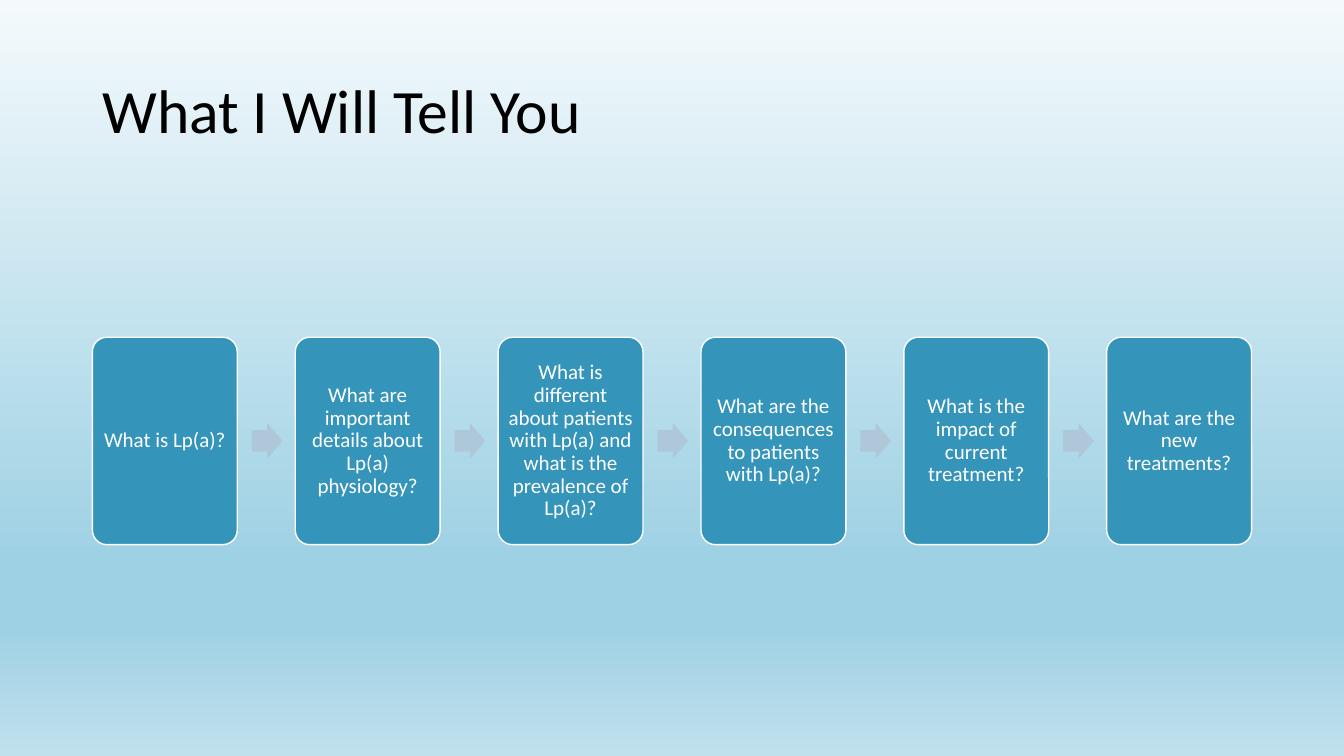
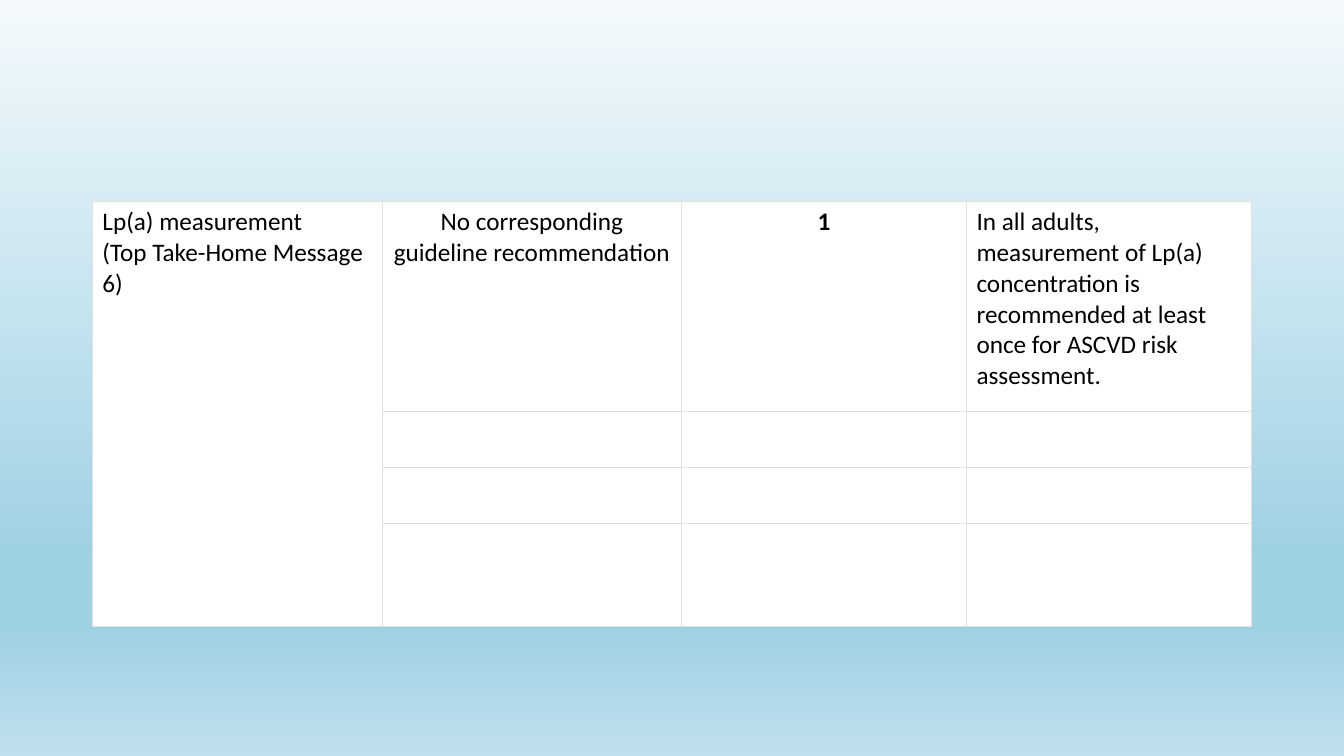
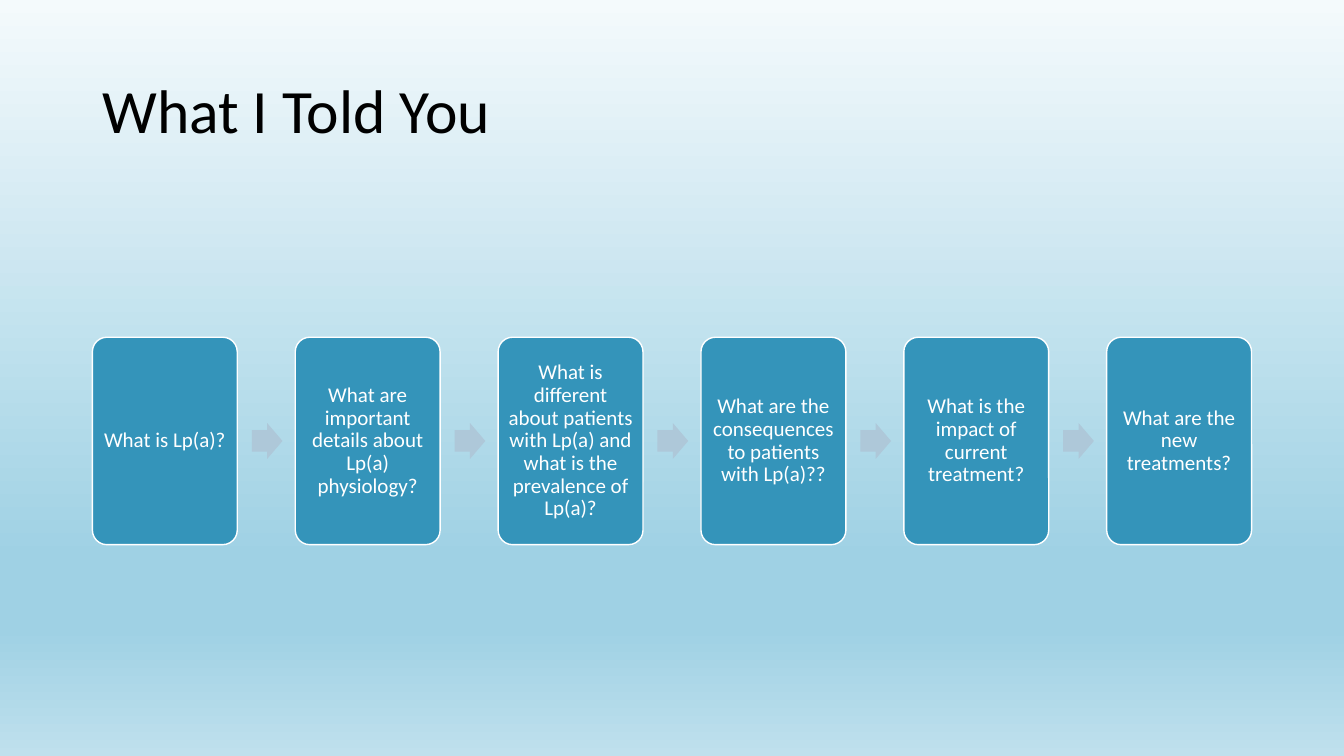
from copy import deepcopy

from lxml.etree import SubElement
from pptx import Presentation
from pptx.dml.color import RGBColor
from pptx.enum.shapes import MSO_SHAPE as Shape
from pptx.enum.text import MSO_ANCHOR as Anchor, PP_ALIGN as Align
from pptx.oxml.ns import qn
from pptx.util import Pt

# Shared look
FONT = "Calibri"
BLACK = RGBColor(0x00, 0x00, 0x00)
WHITE = RGBColor(0xFF, 0xFF, 0xFF)
STEP_BLUE = RGBColor(0x34, 0x94, 0xBA)
ARROW_BLUE = RGBColor(0xAE, 0xC8, 0xD9)
GRID_GREY = RGBColor(0xE0, 0xE0, 0xE0)
SKY = [
    (0, RGBColor(0xF4, 0xFA, 0xFC)),
    (0.74, RGBColor(0x9F, 0xD1, 0xE4)),
    (0.83, RGBColor(0x9F, 0xD1, 0xE4)),
    (1, RGBColor(0xBF, 0xE0, 0xED)),
]

# Regions: left, top, width, height in points
TITLE_BOX = (66, 28.75, 828, 104.4)
STEPS_BOX = (66, 240.9, 828, 148.2)
TABLE_BOX = (66, 144.2, 828, 303.6)

QUESTIONS = [
    "What is Lp(a)?",
    "What are important details about Lp(a) physiology?",
    "What is different about patients with Lp(a) and what is the prevalence of Lp(a)?",
    "What are the consequences to patients with Lp(a)?",
    "What is the impact of current treatment?",
    "What are the new treatments?",
]
QUESTIONS_TOLD = [q.replace("patients with Lp(a)?", "patients with Lp(a)??")
                  for q in QUESTIONS]

# Guideline table: text, alignment, bold
GUIDELINE = [
    ("Lp(a) measurement\v(Top Take-Home Message 6)", Align.LEFT, False),
    ("No corresponding guideline recommendation", Align.CENTER, False),
    ("1", Align.CENTER, True),
    ("In all adults, measurement of Lp(a) concentration is recommended "
     "at least once for ASCVD risk assessment.", Align.LEFT, False),
]
COLUMN_WIDTHS = [207.1, 213.7, 203.6, 203.6]
ROW_HEIGHTS = [149.6, 40, 40, 74]


def set_background(master):
    """Give every slide the same four-stop vertical gradient."""
    fill = master.background.fill
    fill.gradient()
    fill.gradient_angle = 270
    stop_list = next(master.element.iter(qn("a:gsLst")))
    while len(stop_list) < len(SKY):
        stop_list.append(deepcopy(stop_list[0]))
    for stop, (position, color) in zip(fill.gradient_stops, SKY):
        stop.position = position
        stop.color.rgb = color


def write(frame, text, size, color, align=Align.LEFT, bold=False, spacing=None):
    frame.word_wrap = True
    frame.text = text
    paragraph = frame.paragraphs[0]
    paragraph.alignment = align
    paragraph.line_spacing = spacing
    for run in paragraph.runs:
        run.font.name = FONT
        run.font.size = Pt(size)
        run.font.bold = bold
        run.font.color.rgb = color


def add_title(slide, text, box):
    frame = slide.shapes.add_textbox(*map(Pt, box)).text_frame
    frame.vertical_anchor = Anchor.MIDDLE
    write(frame, text, 44, BLACK, spacing=0.9)


def add_flat_shape(slide, kind, box, color):
    shape = slide.shapes.add_shape(kind, *map(Pt, box))
    shape.shadow.inherit = False
    shape.fill.solid()
    shape.fill.fore_color.rgb = color
    shape.line.fill.background()
    return shape


def add_steps(slide, questions, box):
    """Row of equal cards, with an arrow in each gap of 0.4 card widths."""
    left, top, width, height = box
    count = len(questions)
    card_width = width / (count + 0.4 * (count - 1))
    arrow_width, arrow_height = 0.212 * card_width, 0.248 * card_width

    for index, question in enumerate(questions):
        card_left = left + index * 1.4 * card_width

        # Question card
        card = add_flat_shape(slide, Shape.ROUNDED_RECTANGLE,
                              (card_left, top, card_width, height), STEP_BLUE)
        card.adjustments[0] = 0.1
        card.line.color.rgb = WHITE
        card.line.width = Pt(1)
        frame = card.text_frame
        frame.margin_left = frame.margin_right = Pt(4.2)
        frame.margin_top = frame.margin_bottom = Pt(4.2)
        frame.vertical_anchor = Anchor.MIDDLE
        write(frame, question, 15, WHITE, Align.CENTER, spacing=0.9)

        # Arrow to the next card
        if index < count - 1:
            arrow = add_flat_shape(
                slide, Shape.RIGHT_ARROW,
                (card_left + 1.1 * card_width, top + (height - arrow_height) / 2,
                 arrow_width, arrow_height), ARROW_BLUE)
            arrow.adjustments[0] = 0.6
            arrow.adjustments[1] = 0.5


def style_cell(cell):
    properties = cell._tc.get_or_add_tcPr()
    for side in ("a:lnL", "a:lnR", "a:lnT", "a:lnB"):
        border = SubElement(properties, qn(side), w=str(Pt(0.75)))
        solid = SubElement(border, qn("a:solidFill"))
        SubElement(solid, qn("a:srgbClr"), val=str(GRID_GREY))
    cell.fill.solid()
    cell.fill.fore_color.rgb = WHITE


def add_guideline_table(slide, box):
    table = slide.shapes.add_table(len(ROW_HEIGHTS), len(COLUMN_WIDTHS),
                                   *map(Pt, box)).table
    table.first_row = table.horz_banding = False
    for column, width in zip(table.columns, COLUMN_WIDTHS):
        column.width = Pt(width)
    for row, height in zip(table.rows, ROW_HEIGHTS):
        row.height = Pt(height)
    for cell in table.iter_cells():
        style_cell(cell)

    # The topic spans all rows
    table.cell(0, 0).merge(table.cell(len(ROW_HEIGHTS) - 1, 0))
    for column, (text, align, bold) in enumerate(GUIDELINE):
        write(table.cell(0, column).text_frame, text, 18, BLACK, align, bold)


def main():
    prs = Presentation()
    prs.slide_width, prs.slide_height = Pt(960), Pt(540)
    set_background(prs.slide_master)
    blank = prs.slide_layouts[6]

    # Opening agenda
    agenda = prs.slides.add_slide(blank)
    add_title(agenda, "What I Will Tell You", TITLE_BOX)
    add_steps(agenda, QUESTIONS, STEPS_BOX)

    # Guideline recommendation
    add_guideline_table(prs.slides.add_slide(blank), TABLE_BOX)

    # Closing recap
    recap = prs.slides.add_slide(blank)
    add_title(recap, "What I Told You", TITLE_BOX)
    add_steps(recap, QUESTIONS_TOLD, STEPS_BOX)

    prs.save("out.pptx")


if __name__ == "__main__":
    main()
